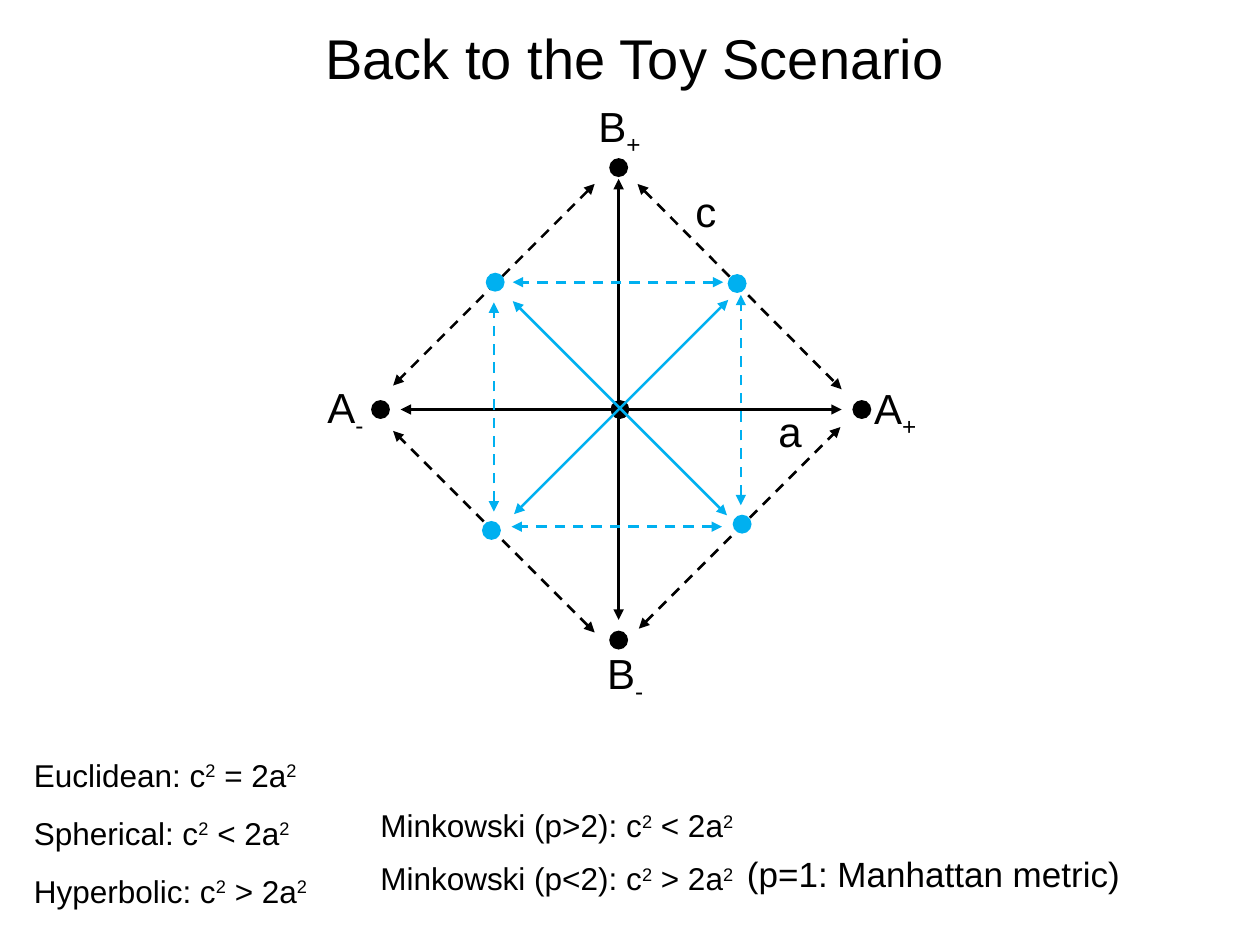
from typing import NamedTuple

from lxml.etree import SubElement
from pptx import Presentation
from pptx.dml.color import RGBColor
from pptx.enum.dml import MSO_LINE
from pptx.enum.shapes import MSO_CONNECTOR, MSO_SHAPE
from pptx.enum.text import MSO_ANCHOR, MSO_AUTO_SIZE, PP_ALIGN
from pptx.oxml.ns import qn
from pptx.util import Inches, Pt

BLACK = RGBColor(0x00, 0x00, 0x00)
BLUE = RGBColor(0x00, 0xB0, 0xF0)
FONT = "Arial"
CELL = Inches(0.1)  # the slide is a grid of 100 columns by 75 rows
DOT = 1.5
BASELINES = {"^": "30000", "_": "-25000"}


class Dot(NamedTuple):
    """A point given by its centre."""
    col: float
    row: float


class Arrow(NamedTuple):
    col1: float
    row1: float
    col2: float
    row2: float
    dashed: bool = False


class Label(NamedTuple):
    """Text whose runs are parted by |; ^ starts a superscript, _ a subscript."""
    text: str
    col: float
    row: float
    cols: float
    rows: float
    size: int
    wrap: bool = False


AXIS_DOTS = [Dot(49.2, 32.5), Dot(68.4, 32.5), Dot(30.2, 32.5),
             Dot(49.1, 13.3), Dot(49.1, 50.8)]
AXIS_ARROWS = [
    Arrow(31.8, 32.5, 66.8, 32.5),
    Arrow(49.1, 49.2, 49.1, 14.2),
    Arrow(50.6, 14.6, 66.8, 30.9, True),
    Arrow(47.2, 50.2, 31.2, 34.2, True),
    Arrow(47.2, 14.6, 31.2, 30.6, True),
    Arrow(50.7, 49.9, 66.7, 33.9, True),
]
MIDPOINT_DOTS = [Dot(58.5, 22.5), Dot(58.9, 41.6), Dot(39.3, 22.4), Dot(39.0, 42.1)]
MIDPOINT_ARROWS = [
    Arrow(40.7, 23.9, 57.7, 40.9),
    Arrow(40.8, 40.8, 57.8, 23.8),
    Arrow(58.8, 40.1, 58.8, 23.4, True),
    Arrow(39.2, 40.6, 39.2, 24.0, True),
    Arrow(57.4, 22.4, 40.7, 22.4, True),
    Arrow(57.3, 41.8, 40.6, 41.8, True),
]
LABELS = [
    Label("a", 60.8, 31.7, 3.3, 5, 24, True),
    Label("c", 54.2, 14.2, 3.3, 5, 24, True),
    Label("A|_+", 68.4, 29.9, 5.6, 5, 24),
    Label("A|_-", 25, 29.8, 5, 5, 24),
    Label("B|_+", 46.5, 7.5, 5.6, 5, 24),
    Label("B|_-", 47.2, 50.9, 5, 5, 24),
    Label("Euclidean: c|^2| = 2a|^2", 1.7, 59.5, 23.3, 4, 18),
    Label("Spherical: c|^2| < 2a|^2", 1.7, 64.1, 22.7, 4, 18),
    Label("Hyperbolic: c|^2| > 2a|^2", 1.7, 68.7, 24.1, 4, 18),
    Label("Minkowski (p>2): c|^2| < 2a|^2", 29.2, 63.5, 30.5, 4, 18),
    Label("Minkowski (p<2): c|^2| > 2a|^2", 29.2, 67.7, 30.5, 4, 18),
    Label("(p=1: Manhattan metric)", 58.3, 67.2, 31.8, 4.4, 20),
]
TITLE = Label("Back to the Toy Scenario", 5.4, -1.7, 90, 12.5, 32, True)


def grid(*cells: float) -> list[int]:
    return [round(cell * CELL) for cell in cells]


def add_dot(shapes, dot: Dot, color: RGBColor) -> None:
    box = grid(dot.col - DOT / 2, dot.row - DOT / 2, DOT, DOT)
    sp = shapes.add_shape(MSO_SHAPE.OVAL, *box)
    sp.shadow.inherit = False
    sp.fill.solid()
    sp.fill.fore_color.rgb = color
    sp.line.fill.background()


def add_arrow(shapes, arrow: Arrow, color: RGBColor) -> None:
    """Draw a line with a triangle at both ends."""
    cxn = shapes.add_connector(MSO_CONNECTOR.STRAIGHT, *grid(*arrow[:4]))
    cxn.line.color.rgb = color
    cxn.line.width = Pt(1.5)
    if arrow.dashed:
        cxn.line.dash_style = MSO_LINE.DASH
    ln = cxn.line._get_or_add_ln()
    for end in ("a:headEnd", "a:tailEnd"):
        SubElement(ln, qn(end), type="triangle")
    SubElement(cxn._element.spPr, qn("a:effectLst"))


def add_figure(shapes, dots: list[Dot], arrows: list[Arrow], color: RGBColor) -> None:
    for dot in dots:
        add_dot(shapes, dot, color)
    for arrow in arrows:
        add_arrow(shapes, arrow, color)


def add_label(shapes, label: Label):
    sp = shapes.add_textbox(*grid(label.col, label.row, label.cols, label.rows))
    tf = sp.text_frame
    tf.word_wrap = label.wrap
    tf.auto_size = MSO_AUTO_SIZE.SHAPE_TO_FIT_TEXT
    for part in label.text.split("|"):
        r = tf.paragraphs[0].add_run()
        r.text = part.lstrip("^_")
        r.font.name = FONT
        r.font.size = Pt(label.size)
        r.font.color.rgb = BLACK
        if part[0] in BASELINES:
            r.font._element.set("baseline", BASELINES[part[0]])
    return sp


def add_title(shapes, label: Label) -> None:
    tf = add_label(shapes, label).text_frame
    tf.auto_size = MSO_AUTO_SIZE.NONE
    tf.vertical_anchor = MSO_ANCHOR.MIDDLE
    tf.paragraphs[0].alignment = PP_ALIGN.CENTER


def main() -> None:
    prs = Presentation()
    prs.slide_width, prs.slide_height = grid(100, 75)
    s = prs.slides.add_slide(prs.slide_layouts[6])
    add_figure(s.shapes, AXIS_DOTS, AXIS_ARROWS, BLACK)
    for label in LABELS:
        add_label(s.shapes, label)
    midpoints = s.shapes.add_group_shape()
    add_figure(midpoints.shapes, MIDPOINT_DOTS, MIDPOINT_ARROWS, BLUE)
    add_title(s.shapes, TITLE)
    prs.save("out.pptx")


if __name__ == "__main__":
    main()
